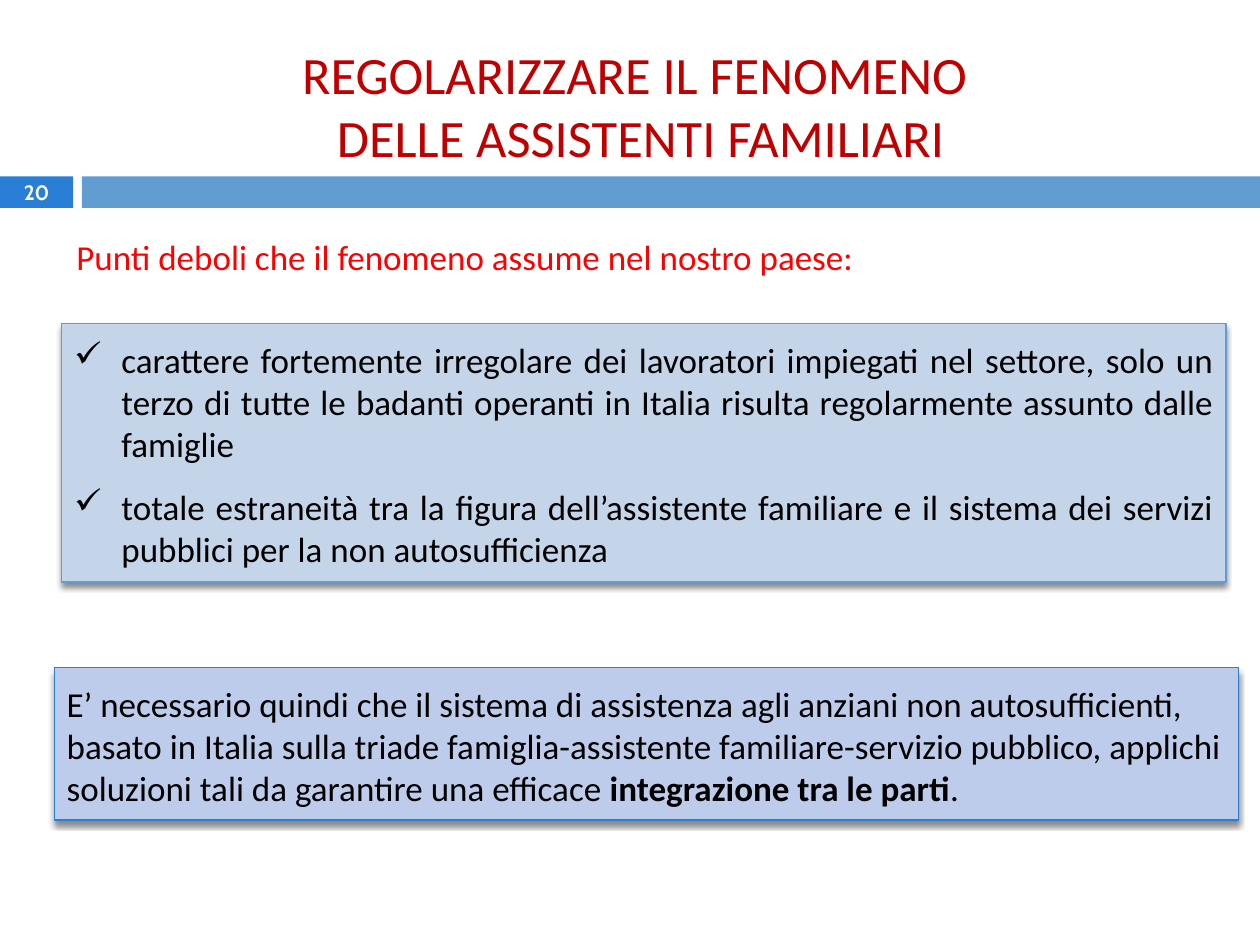
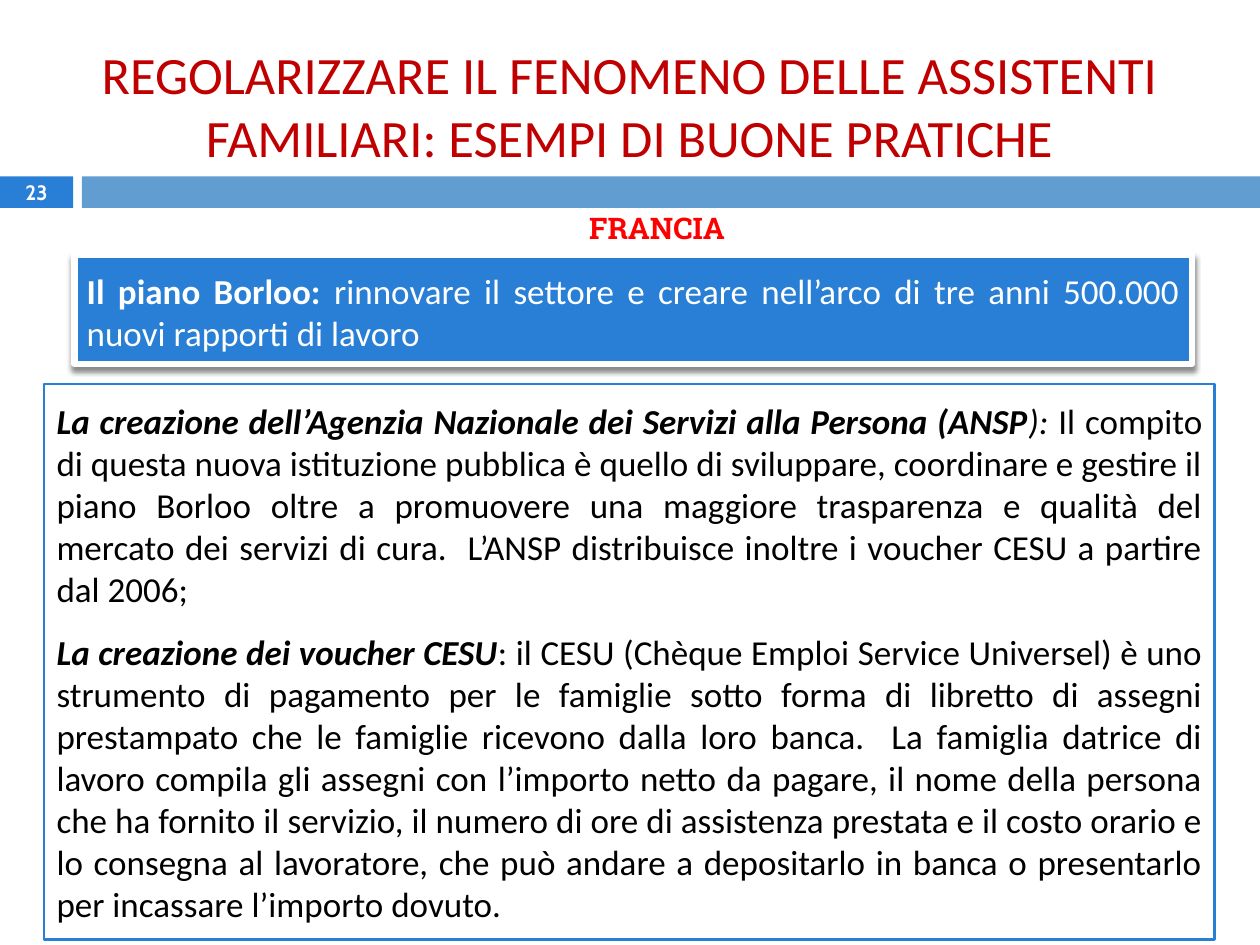
from lxml import etree
from pptx import Presentation
from pptx.dml.color import RGBColor
from pptx.enum.shapes import MSO_SHAPE
from pptx.enum.text import MSO_ANCHOR, PP_ALIGN
from pptx.oxml.ns import qn
from pptx.util import Pt

RECT = MSO_SHAPE.RECTANGLE
TOP, MIDDLE = MSO_ANCHOR.TOP, MSO_ANCHOR.MIDDLE
LEFT, CENTER, JUSTIFY = PP_ALIGN.LEFT, PP_ALIGN.CENTER, PP_ALIGN.JUSTIFY

WIDTH, HEIGHT = 720, 540
BLUE, SKY, PALE, LILAC = "297FD5", "629DD1", "C5D5E9", "BECCEB"
WINE, RED, BLACK, WHITE = "C00000", "FF0000", "000000", "FFFFFF"
BODY, HEAD, PAGE = "Calibri", "Roboto Slab", "Cabin"
BAND_TOP, BAND_HIGH, TAB_WIDE, BAND_LEFT = 100.8, 18, 41.8, 46.8
INDENT = 27


def rgb(color):
    return RGBColor.from_string(color)


def add_tag(parent, tag, **attrs):
    return etree.SubElement(parent, qn(tag), attrs)


def add_rect(slide, box, fill, line=None, weight=0):
    rect = slide.shapes.add_shape(RECT, *map(Pt, box))
    rect.shadow.inherit = False
    rect.fill.solid()
    rect.fill.fore_color.rgb = rgb(fill)
    if line:
        rect.line.color.rgb = rgb(line)
        rect.line.width = Pt(weight)
    else:
        rect.line.fill.background()
    return rect


def add_shadow(rect):
    effects = rect._element.spPr.find(qn("a:effectLst"))
    drop = add_tag(effects, "a:outerShdw", blurRad=str(Pt(3)), dist=str(Pt(2.4)),
                   dir="5400000", algn="ctr", rotWithShape="0")
    tone = add_tag(drop, "a:srgbClr", val=BLACK)
    add_tag(tone, "a:alpha", val="45000")


def add_check(para):
    props = para._p.get_or_add_pPr()
    props.set("marL", str(Pt(INDENT)))
    props.set("indent", str(-Pt(INDENT)))
    add_tag(props, "a:buChar", char="✓")


def write(shape, paras, size=20, color=BLACK, font=BODY, bold=None,
          align=CENTER, anchor=TOP, after=0):
    """Fill a shape with paragraphs, each a list of (text, style) runs;
    a style holds "b" for bold and "i" for italic."""
    frame = shape.text_frame
    frame.word_wrap = True
    frame.vertical_anchor = anchor
    for num, runs in enumerate(paras):
        para = frame.add_paragraph() if num else frame.paragraphs[0]
        para.alignment = align
        para.space_after = Pt(after)
        face = para.font
        face.name, face.size, face.bold = font, Pt(size), bold
        face.color.rgb = rgb(color)
        for text, style in runs:
            run = para.add_run()
            run.text = text
            if "b" in style:
                run.font.bold = True
            if "i" in style:
                run.font.italic = True


def add_label(slide, box, lines, **look):
    label = slide.shapes.add_textbox(*map(Pt, box))
    write(label, [[(line, "")] for line in lines], **look)


def add_panel(slide, box, paras, fill, line, weight, shadow=True, check=False,
              color=BLACK, align=JUSTIFY, after=12):
    panel = add_rect(slide, box, fill, line, weight)
    if shadow:
        add_shadow(panel)
    frame = panel.text_frame
    frame.margin_top, frame.margin_bottom = Pt(8.64), Pt(5.76)
    write(panel, paras, color=color, align=align, after=after)
    if check:
        for para in frame.paragraphs:
            add_check(para)


def add_page(deck, number, title, left, wide):
    """Add a slide with its bands, title and page number."""
    slide = deck.slides.add_slide(deck.slide_layouts[6])
    tab = (0, BAND_TOP, TAB_WIDE, BAND_HIGH)
    add_rect(slide, tab, BLUE)
    add_rect(slide, (BAND_LEFT, BAND_TOP, WIDTH - BAND_LEFT, BAND_HIGH), SKY)
    add_label(slide, (left, 20.2, wide, 80), title, size=30, color=WINE)
    add_label(slide, tab, [number], size=11.9, color=WHITE, font=PAGE,
              bold=True, anchor=MIDDLE)
    return slide


def add_weak(deck):
    slide = add_page(deck, "20", ["REGOLARIZZARE IL FENOMENO ",
                                  "DELLE ASSISTENTI FAMILIARI"], 20.2, 692)
    add_panel(slide, (35.3, 185, 665.3, 147.6), [
        [("carattere fortemente irregolare dei lavoratori impiegati nel settore, "
          "solo un terzo di tutte le badanti operanti in Italia risulta "
          "regolarmente assunto dalle famiglie", "")],
        [("totale estraneità tra la figura dell’assistente familiare e il sistema "
          "dei servizi pubblici per la non autosufficienza", "")],
    ], PALE, SKY, 0.79, check=True)
    add_panel(slide, (31, 381.6, 676.8, 87), [
        [("E’ necessario quindi che il sistema di assistenza agli anziani non "
          "autosufficienti, basato in Italia sulla triade famiglia-assistente "
          "familiare-servizio pubblico, applichi soluzioni tali da garantire una "
          "efficace ", ""),
         ("integrazione tra le parti", "b"), (".", "")],
    ], LILAC, BLUE, 0.79, align=LEFT, after=6)
    add_label(slide, (31, 131, 469.4, 31.7),
              ["Punti deboli che il fenomeno assume nel nostro paese:"], color=RED)


def add_france(deck):
    slide = add_page(deck, "23", ["REGOLARIZZARE IL FENOMENO DELLE ASSISTENTI "
                                  "FAMILIARI: ESEMPI DI BUONE PRATICHE"], 8.6, 702.7)
    add_label(slide, (308.9, 116.6, 133.2, 28), ["FRANCIA"], size=17,
              color=RED, font=HEAD, bold=True)
    add_panel(slide, (42.5, 145.4, 638.6, 62.6), [
        [("Il piano Borloo: ", "b"),
         ("rinnovare il settore e creare nell’arco di tre anni 500.000 nuovi "
          "rapporti di lavoro", "")],
    ], BLUE, WHITE, 3.75, color=WHITE)
    add_panel(slide, (25.2, 219.4, 669, 317.5), [
        [("La creazione dell’Agenzia Nazionale dei Servizi alla Persona (ANSP", "bi"),
         ("): ", "i"),
         ("Il compito di questa nuova istituzione pubblica è quello di sviluppare, "
          "coordinare e gestire il piano Borloo oltre a promuovere una maggiore "
          "trasparenza e qualità del mercato dei servizi di cura.  L’ANSP "
          "distribuisce inoltre i voucher CESU a partire dal 2006;", "")],
        [("La creazione dei voucher CESU", "bi"),
         (": il CESU (Chèque Emploi Service Universel) è uno strumento di pagamento "
          "per le famiglie sotto forma di libretto di assegni prestampato che le "
          "famiglie ricevono dalla loro banca.  La famiglia datrice di lavoro "
          "compila gli assegni con l’importo netto da pagare, il nome della persona "
          "che ha fornito il servizio, il numero di ore di assistenza prestata e il "
          "costo orario e lo consegna al lavoratore, che può andare a depositarlo "
          "in banca o presentarlo per incassare l’importo dovuto.", "")],
    ], WHITE, BLUE, 1.5, shadow=False)


def main():
    deck = Presentation()
    deck.slide_width, deck.slide_height = Pt(WIDTH), Pt(HEIGHT)
    add_weak(deck)
    add_france(deck)
    deck.save("out.pptx")


if __name__ == "__main__":
    main()
